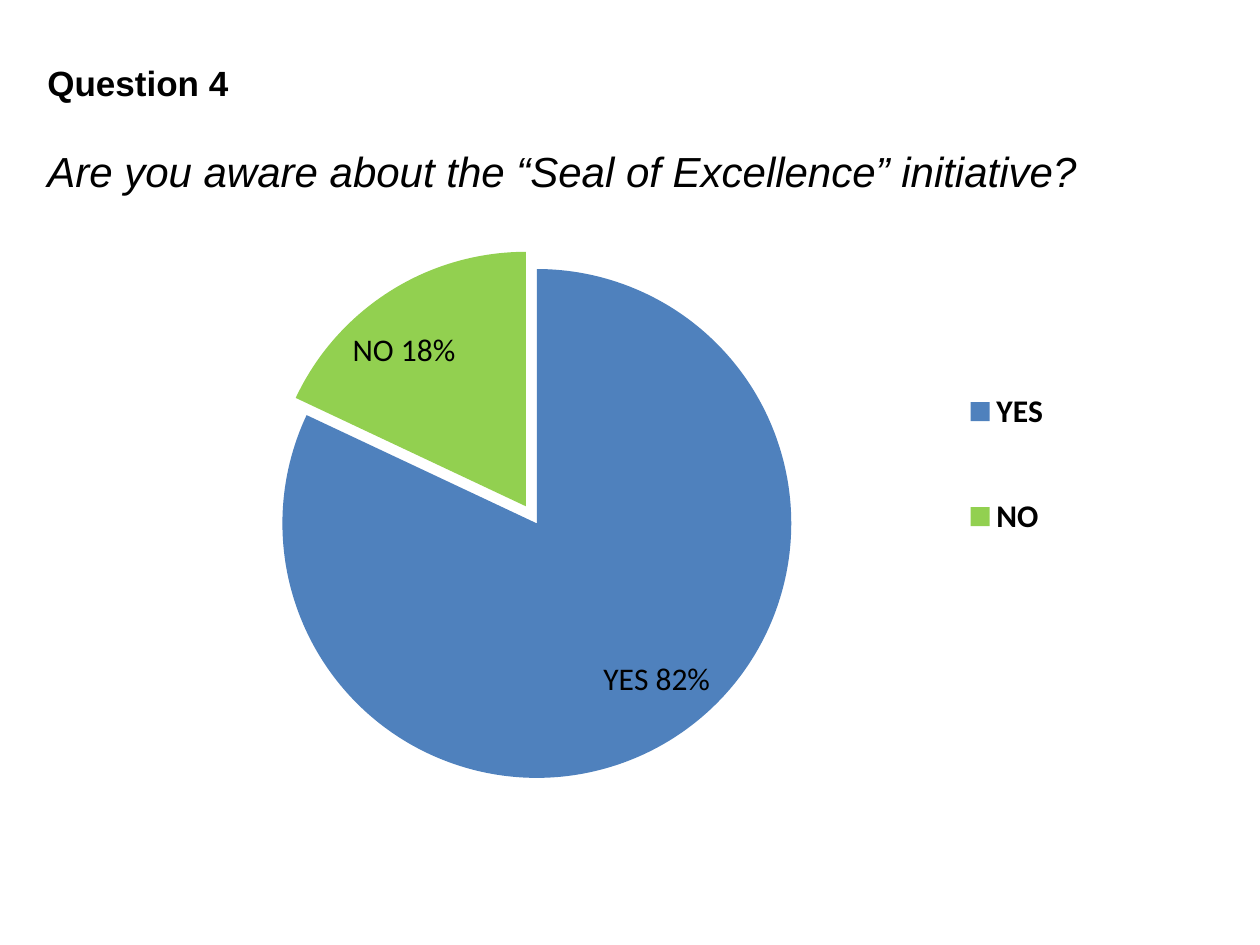
from lxml.etree import SubElement
from pptx import Presentation
from pptx.chart.data import CategoryChartData
from pptx.dml.color import RGBColor
from pptx.enum.chart import XL_CHART_TYPE, XL_LABEL_POSITION, XL_LEGEND_POSITION
from pptx.enum.text import MSO_ANCHOR, MSO_AUTO_SIZE, PP_ALIGN
from pptx.oxml import parse_xml
from pptx.oxml.ns import nsdecls, qn
from pptx.util import Cm, Pt


def style(font, size, face, bold=False, italic=False, color="000000"):
    """Set every trait of a font."""
    font.size, font.name = Pt(size), face
    font.bold, font.italic = bold, italic
    font.color.rgb = RGBColor.from_string(color)


def layout(**parts):
    """Return a manual layout made of the given parts."""
    inner = "".join(f'<c:{key} val="{val}"/>' for key, val in parts.items())
    return parse_xml(f'<c:layout {nsdecls("c")}><c:manualLayout>{inner}'
                     '</c:manualLayout></c:layout>')


def add_heading(slide, box):
    """Fill the title with the question number and its wording."""
    title = slide.shapes.title
    title.left, title.top, title.width, title.height = box
    frame = title.text_frame
    frame.text = "Question 4\nAre you aware about the “Seal of Excellence” initiative?"
    frame.word_wrap = True
    frame.auto_size = MSO_AUTO_SIZE.NONE
    frame.vertical_anchor = MSO_ANCHOR.TOP
    number, ask = frame.paragraphs
    for para in (number, ask):
        para.alignment = PP_ALIGN.LEFT
        para.space_before = Pt(0)
    ask.space_before = Pt(24)
    style(number.font, 20, "Arial", bold=True)
    style(ask.font, 24, "Arial", italic=True)


def add_label(series, i, x, y):
    """Show category and share in a slice, moved by x and y."""
    label = series.points[i].data_label
    label.position = XL_LABEL_POSITION.INSIDE_END
    style(label.font, 18, "Calibri")
    node = series._element.findall(".//" + qn("c:dLbl"))[i]
    node.find(qn("c:showCatName")).set("val", "1")
    node.find(qn("c:idx")).addnext(layout(x=x, y=y))
    gap = SubElement(node, qn("c:separator"))
    gap.text = " "
    node.find(qn("c:showBubbleSize")).addnext(gap)


def add_legend(chart):
    """Place the legend to the right of the pie."""
    chart.has_legend = True
    legend = chart.legend
    legend.position = XL_LEGEND_POSITION.RIGHT
    legend.include_in_layout = False
    style(legend.font, 18, "Calibri", bold=True)
    node = legend._element
    for old in node.findall(qn("c:layout")):
        node.remove(old)
    node.find(qn("c:legendPos")).addnext(
        layout(xMode="edge", yMode="edge", x=0.85, y=0.16, w=0.13, h=0.49))


def add_pie(slide, box):
    """Draw the answers as a pie with the second slice pulled out."""
    data = CategoryChartData(number_format="0%")
    data.categories = ["YES", "NO"]
    data.add_series("Series 1", [0.82, 0.18])
    chart = slide.shapes.add_chart(XL_CHART_TYPE.PIE, *box, data).chart
    chart.has_title = False
    style(chart.font, 10, "Calibri")
    plot = chart.plots[0]
    plot.vary_by_categories = True
    series = plot.series[0]
    slices = [("4F81BD", 0.04, -0.06), ("92D050", -0.04, 0.06)]
    for i, (color, x, y) in enumerate(slices):
        fill = series.points[i].format.fill
        fill.solid()
        fill.fore_color.rgb = RGBColor.from_string(color)
        add_label(series, i, x, y)
    point = series._element.findall(qn("c:dPt"))[1]
    burst = SubElement(point, qn("c:explosion"), val="8")
    point.find(qn("c:spPr")).addprevious(burst)
    area = plot._element.getparent()
    for old in area.findall(qn("c:layout")):
        area.remove(old)
    area.insert(0, layout(layoutTarget="inner", xMode="edge", yMode="edge",
                          x=0.04, y=0.06, w=0.83, h=0.9))
    add_legend(chart)


def main():
    """Build and save the slide."""
    deck = Presentation()
    deck.slide_width, deck.slide_height = Cm(25.4), Cm(19.05)
    slide = deck.slides.add_slide(deck.slide_layouts[5])
    add_heading(slide, (Cm(0.7), Cm(1.12), Cm(22.6), Cm(3)))
    add_pie(slide, (Cm(1.45), Cm(4.74), Cm(20.6), Cm(11.4)))
    deck.save("out.pptx")


if __name__ == "__main__":
    main()
